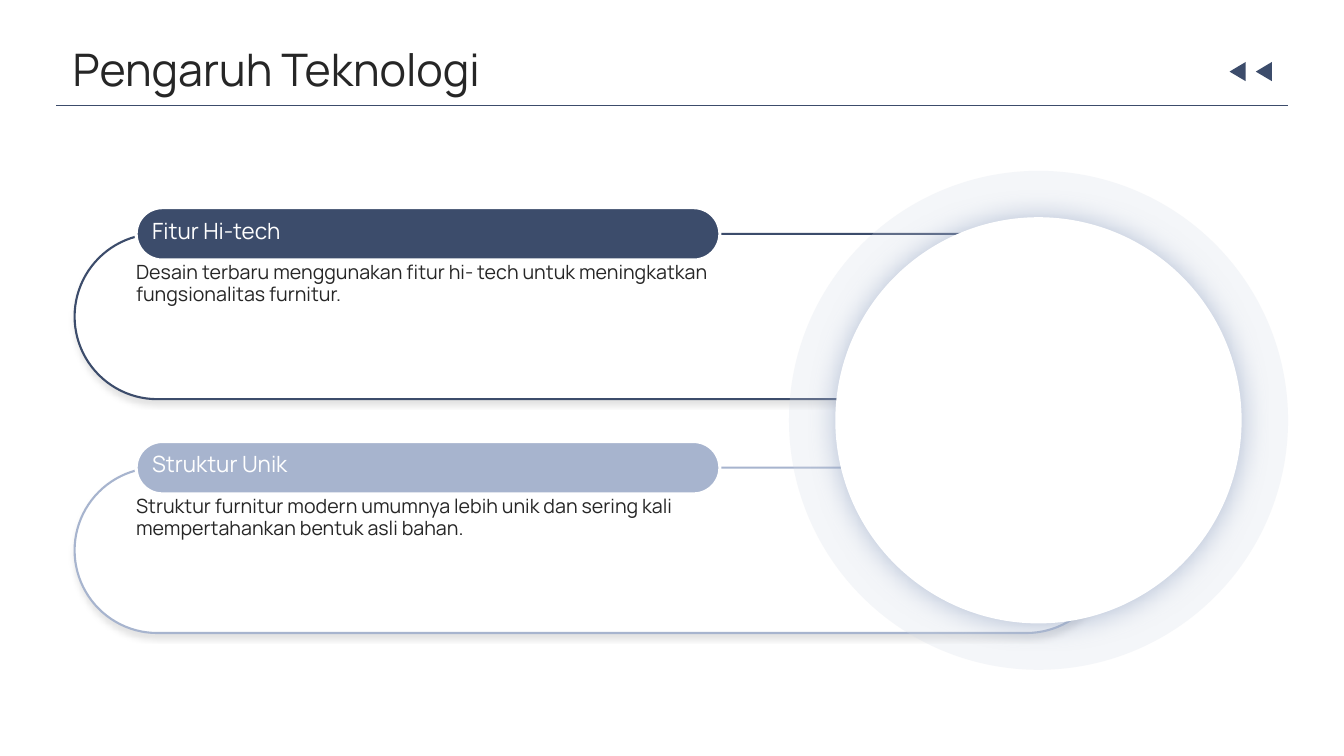
from dataclasses import dataclass

from lxml.etree import SubElement
from pptx import Presentation
from pptx.dml.color import RGBColor
from pptx.enum.shapes import MSO_CONNECTOR, MSO_SHAPE
from pptx.enum.text import MSO_ANCHOR
from pptx.oxml.ns import qn
from pptx.util import Inches, Pt

NAVY = RGBColor(0x3C, 0x4C, 0x6B)
LIGHT_BLUE = RGBColor(0xA7, 0xB4, 0xCE)
HALO_BLUE = RGBColor(0xD3, 0xDA, 0xE6)
GLOW_BLUE = RGBColor(0x7B, 0x8F, 0xB5)
INK = RGBColor(0x26, 0x26, 0x26)
WHITE = RGBColor(0xFF, 0xFF, 0xFF)
BLACK = RGBColor(0x00, 0x00, 0x00)
FONT = "Manrope"


@dataclass
class Shadow:
    color: RGBColor
    opacity: int
    blur: float
    distance: float = 0
    angle: int = 0


@dataclass
class Panel:
    heading: str
    body: str
    color: RGBColor


PANELS = [
    Panel("Fitur Hi-tech",
          "Desain terbaru menggunakan fitur hi- tech untuk meningkatkan "
          "fungsionalitas furnitur.", NAVY),
    Panel("Struktur Unik",
          "Struktur furnitur modern umumnya lebih unik dan sering kali "
          "mempertahankan bentuk asli bahan.", LIGHT_BLUE),
]
PANEL_TOP, PANEL_STEP = 2.32, 2.32
CIRCLE_X, CIRCLE_Y = 10.3, 4.17


def set_opacity(color_parent, percent: int) -> None:
    SubElement(color_parent, qn("a:alpha")).set("val", str(percent * 1000))


def add_shadow(shape, shadow: Shadow) -> None:
    effects = shape._element.spPr.find(qn("a:effectLst"))
    outer = SubElement(effects, qn("a:outerShdw"), {
        "blurRad": str(Pt(shadow.blur)), "dist": str(Pt(shadow.distance)),
        "dir": str(shadow.angle * 60000), "algn": "ctr", "rotWithShape": "0"})
    color = SubElement(outer, qn("a:srgbClr"), {"val": str(shadow.color)})
    set_opacity(color, shadow.opacity)


def add_figure(page, kind: MSO_SHAPE, left: float, top: float, width: float,
               height: float, fill: RGBColor, line: RGBColor | None = None,
               line_width: float = 1, opacity: int = 100,
               shadow: Shadow | None = None):
    shape = page.shapes.add_shape(kind, Inches(left), Inches(top),
                                  Inches(width), Inches(height))
    shape.shadow.inherit = False
    shape.fill.solid()
    shape.fill.fore_color.rgb = fill
    if opacity < 100:
        set_opacity(shape._element.spPr.find(
            f"{qn('a:solidFill')}/{qn('a:srgbClr')}"), opacity)
    if line is None:
        shape.line.fill.background()
    else:
        shape.line.color.rgb = line
        shape.line.width = Pt(line_width)
    if kind == MSO_SHAPE.ROUNDED_RECTANGLE:
        shape.adjustments[0] = 0.5
    if shadow:
        add_shadow(shape, shadow)
    return shape


def add_circle(page, diameter: float, fill: RGBColor, **look) -> None:
    add_figure(page, MSO_SHAPE.OVAL, CIRCLE_X - diameter / 2,
               CIRCLE_Y - diameter / 2, diameter, diameter, fill, **look)


def add_text(page, text: str, left: float, top: float, width: float,
             height: float, *, size: float, color: RGBColor = INK,
             anchor: MSO_ANCHOR = MSO_ANCHOR.TOP) -> None:
    box = page.shapes.add_textbox(Inches(left), Inches(top),
                                  Inches(width), Inches(height))
    frame = box.text_frame
    frame.word_wrap = True
    frame.vertical_anchor = anchor
    frame.margin_left = frame.margin_right = 0
    frame.margin_top = frame.margin_bottom = 0
    para = frame.paragraphs[0]
    para.line_spacing = 0.9
    span = para.add_run()
    span.text = text
    span.font.name = FONT
    span.font.size = Pt(size)
    span.font.color.rgb = color


def add_header(page) -> None:
    add_text(page, "Pengaruh Teknologi", 0.72, 0.46, 11.88, 0.51,
             size=32, anchor=MSO_ANCHOR.MIDDLE)
    rule = page.shapes.add_connector(MSO_CONNECTOR.STRAIGHT, Inches(0.56),
                                     Inches(1.05), Inches(12.77), Inches(1.05))
    rule.line.color.rgb = NAVY
    rule.line.width = Pt(0.75)
    SubElement(rule._element.spPr, qn("a:effectLst"))
    for left in (12.18, 12.44):
        arrow = add_figure(page, MSO_SHAPE.ISOSCELES_TRIANGLE,
                           left, 0.63, 0.19, 0.16, NAVY)
        arrow.rotation = 270


def main() -> None:
    deck = Presentation()
    deck.slide_width, deck.slide_height = Inches(13.33), Inches(7.5)
    page = deck.slides.add_slide(deck.slide_layouts[6])
    tops = [PANEL_TOP + index * PANEL_STEP for index in range(len(PANELS))]

    # Outlined panels behind the circle
    for panel, top in zip(PANELS, tops):
        add_figure(page, MSO_SHAPE.ROUNDED_RECTANGLE, 0.74, top, 10.26, 1.64,
                   WHITE, panel.color, 1.5, shadow=Shadow(BLACK, 11, 4, 3, 90))

    # Halo and glowing circle
    add_circle(page, 4.95, HALO_BLUE, opacity=24)
    add_circle(page, 4.03, WHITE, shadow=Shadow(GLOW_BLUE, 55, 20))

    # Heading pills and body text
    for panel, top in zip(PANELS, tops):
        add_figure(page, MSO_SHAPE.ROUNDED_RECTANGLE, 1.35, top - 0.26,
                   5.79, 0.52, panel.color, WHITE, 2.25)
        add_text(page, panel.heading, 1.51, top - 0.14, 5.47, 0.27,
                 size=16, color=WHITE)
        add_text(page, panel.body, 1.35, top + 0.29, 6.66, 1.27, size=14)

    # Title, rule and arrows
    add_header(page)
    deck.save("out.pptx")


if __name__ == "__main__":
    main()
